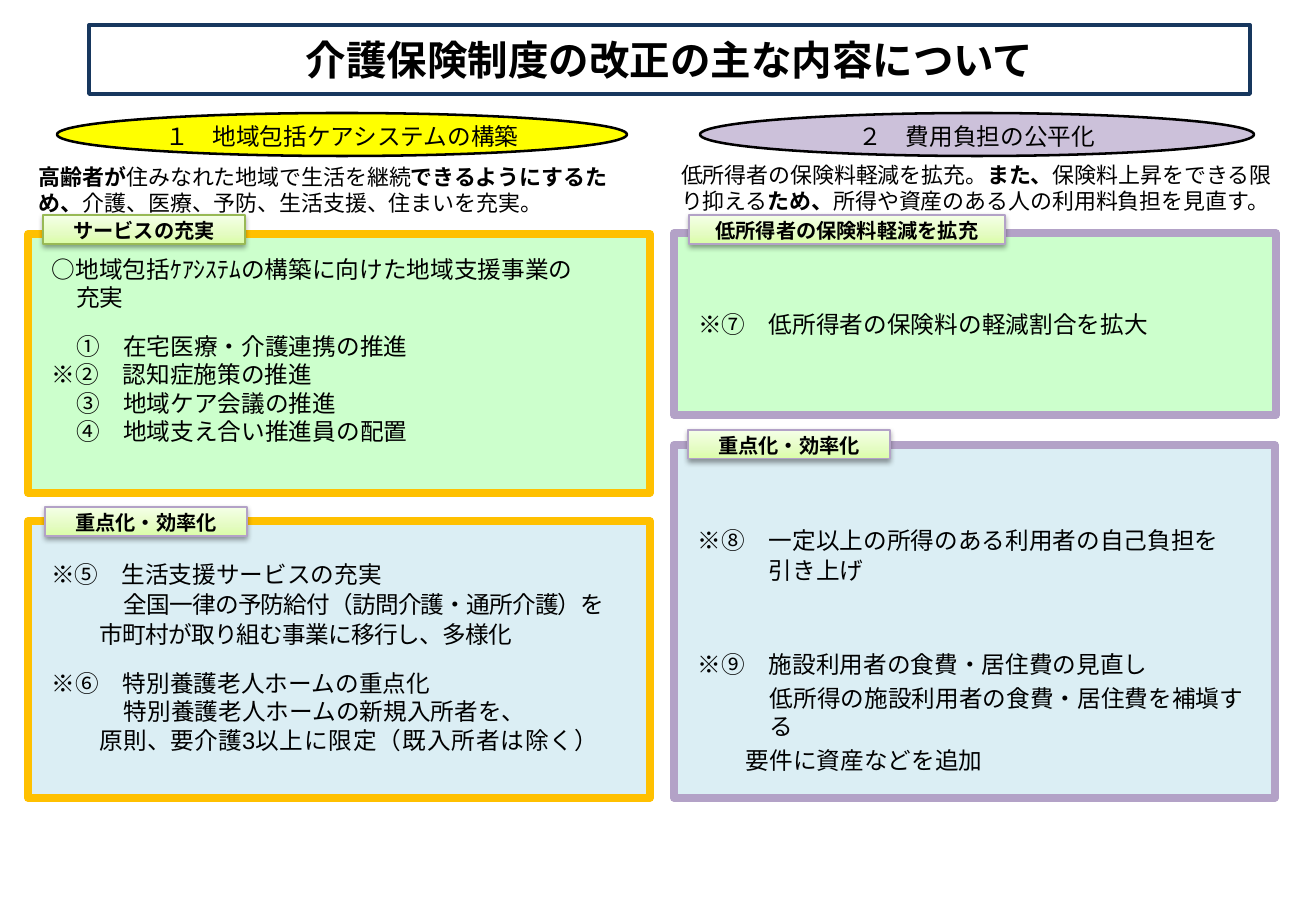
import pptx
import pptx.util
import pptx.dml.color
import pptx.enum.dml
import pptx.enum.lang
import pptx.enum.shapes
import pptx.enum.text
import pptx.oxml.ns
from lxml import etree

SHAPE = pptx.enum.shapes.MSO_SHAPE
ANCHOR = pptx.enum.text.MSO_ANCHOR
ALIGN = pptx.enum.text.PP_ALIGN
NOTO, ARIAL = "Noto Sans CJK JP", "Arial"

C = {"black": "000000", "navy": "17375E", "yellow": "FFFF00", "lilac": "CCC1DA",
     "purple": "B3A2C7", "orange": "FFC000", "green": "CCFFCC", "blue": "DBEEF4",
     "olive": "98B955"}
LABEL_STOPS = [(0, "DAFDA7"), (35000, "E4FCC2"), (100000, "F5FFE7")]

# Content; places are (left, top, width, height) in px
TITLE = ((89, 25, 1161, 69), "介護保険制度の改正の主な内容について")
HEADINGS = [
    ((57, 113, 570, 43), "yellow", "１　地域包括ケアシステムの構築"),
    ((700, 113, 554, 43), "lilac", "２　費用負担の公平化"),
]
# Summaries: runs of (text, bold)
SUMMARIES = [
    ((39, 164, 580, 54), [("高齢者が", True), ("住みなれた地域で生活を継続", False),
                          ("できるようにするため、", True),
                          ("介護、医療、予防、生活支援、住まいを充実。", False)]),
    ((681, 162, 598, 54), [("低所得者の保険料軽減を拡充。", False), ("また、", True),
                           ("保険料上昇をできる限り抑える", False), ("ため、", True),
                           ("所得や資産のある人の利用料負担を見直す。", False)]),
]
# Panels: place, fill, line, top inset, lines of
# (indent px, space before pt, font, [(text, letter spacing pt)])
PANELS = [
    ((28, 234, 622, 259), "green", "orange", 21, [
        (12, 0, NOTO, [("○地域包括ｹｱｼｽﾃﾑの構築に向けた地域支援事業の", 0)]),
        (36, 0, NOTO, [("充実", 0)]),
        (36, 12, NOTO, [("①　在宅医療・介護連携の推進", 0)]),
        (12, 0, NOTO, [("※②　認知症施策の推進", 0)]),
        (36, 0, NOTO, [("③　地域ケア会議の推進", 0)]),
        (36, 0, NOTO, [("④　地域支え合い推進員の配置", 0)])]),
    ((28, 521, 622, 277), "blue", "orange", 39, [
        (12, 0, NOTO, [("※⑤　", -0.5), ("生活支援サービスの充実", 0)]),
        (84, 1, ARIAL, [("全国一律の予防給付（訪問介護・通所介護）を", -0.5)]),
        (60, 1, ARIAL, [("市町村が取り組む事業に移行し、多様化", -0.5)]),
        (12, 12, NOTO, [("※⑥　特別養護老人ホームの重点化", 0)]),
        (84, 0, ARIAL, [("特別養護老人ホームの新規入所者を、", 0)]),
        (60, 0, ARIAL, [("原則、要介護3", 0), ("以上に限定（既入所者は除く）", 0.5)])]),
    ((674, 233, 602, 182), "green", "purple", 77, [
        (12, 0, NOTO, [("※⑦　低所得者の保険料の軽減割合を拡大", 0)])]),
    ((674, 445, 601, 353), "blue", "purple", 81, [
        (12, 0, NOTO, [("※⑧　一定以上の所得のある利用者の自己負担を", 0)]),
        (83, 1, NOTO, [("引き上げ", 0)]),
        (12, 39, NOTO, [("※⑨　施設利用者の食費・居住費の見直し", 0)]),
        (84, 3, ARIAL, [("低所得の施設利用者の食費・居住費を補塡する", 0)]),
        (60, 3, ARIAL, [("要件に資産などを追加", 0)])]),
]
LABELS = [
    ((43, 215, 202, 29), "olive", "サービスの充実"),
    ((45, 507, 202, 29), "purple", "重点化・効率化"),
    ((689, 215, 316, 29), "purple", "低所得者の保険料軽減を拡充"),
    ((688, 430, 202, 29), "purple", "重点化・効率化"),
]


def px(n):
    return round(n * 914400 / 121.5)


def rgb(name):
    return pptx.dml.color.RGBColor.from_string(C[name])


def sub(parent, tag, **attrs):
    return etree.SubElement(parent, pptx.oxml.ns.qn(tag), attrs)


def add_box(kind, place, fill, line, weight):
    sp = s.shapes.add_shape(kind, *map(px, place))
    sp.shadow.inherit = False
    if fill:
        sp.fill.solid()
        sp.fill.fore_color.rgb = rgb(fill)
    else:
        sp.fill.background()
    sp.line.color.rgb = rgb(line)
    sp.line.width = pptx.util.Pt(weight)
    return sp


def frame(sp, anchor=ANCHOR.TOP, top=0, side=0):
    tf = sp.text_frame
    tf.word_wrap = True
    tf.vertical_anchor = anchor
    tf.margin_left = tf.margin_right = px(side)
    tf.margin_top, tf.margin_bottom = px(top), 0
    return tf


def set_par(p, leading, align=ALIGN.LEFT):
    p.alignment = align
    p.line_spacing = pptx.util.Pt(leading)


def add_run(p, text, size, bold=False, font=NOTO, spacing=0):
    r = p.add_run()
    r.text = text
    r.font.size = pptx.util.Pt(size)
    r.font.bold = bold
    r.font.name = font
    r.font.color.rgb = rgb("black")
    r.font.language_id = pptx.enum.lang.MSO_LANGUAGE_ID.JAPANESE
    rPr = r.font._element
    sub(rPr, "a:ea", typeface=font)
    if spacing:
        rPr.set("spc", str(round(spacing * 100)))


def centred(sp, text, size, leading, bold=False, anchor=ANCHOR.MIDDLE, top=0):
    p = frame(sp, anchor, top).paragraphs[0]
    set_par(p, leading, ALIGN.CENTER)
    add_run(p, text, size, bold)


def style_label(sp):
    # Three-stop gradient and soft shadow
    sp.fill.gradient()
    sp.fill.gradient_angle = 90
    spPr = sp._element.spPr
    stops = spPr.find(".//" + pptx.oxml.ns.qn("a:gsLst"))
    for gs in list(stops):
        stops.remove(gs)
    for pos, colour in LABEL_STOPS:
        sub(sub(stops, "a:gs", pos=str(pos)), "a:srgbClr", val=colour)
    shadow = sub(spPr.find(pptx.oxml.ns.qn("a:effectLst")), "a:outerShdw",
                 blurRad="40000", dist="20000", dir="5400000", rotWithShape="0")
    sub(sub(shadow, "a:srgbClr", val=C["black"]), "a:alpha", val="38000")


prs = pptx.Presentation()
prs.slide_width, prs.slide_height = px(1316), px(911)
s = prs.slides.add_slide(prs.slide_layouts[6])

# Title and column headings
place, text = TITLE
centred(add_box(SHAPE.RECTANGLE, place, None, "navy", 2.25), text, 24, 31, True,
        ANCHOR.TOP, 6)
for place, fill, text in HEADINGS:
    centred(add_box(SHAPE.OVAL, place, fill, "black", 1.5), text, 14, 18.7)

# Column summaries
for place, runs in SUMMARIES:
    p = frame(s.shapes.add_textbox(*map(px, place))).paragraphs[0]
    set_par(p, 15.5)
    for text, bold in runs:
        add_run(p, text, 13, bold)

# Panels
for place, fill, line, top, lines in PANELS:
    tf = frame(add_box(SHAPE.RECTANGLE, place, fill, line, 4.5), top=top, side=12)
    for i, (indent, before, font, runs) in enumerate(lines):
        p = tf.add_paragraph() if i else tf.paragraphs[0]
        set_par(p, 16.8)
        p.space_before = pptx.util.Pt(before)
        p._p.get_or_add_pPr().set("marL", str(px(indent)))
        for text, spacing in runs:
            add_run(p, text, 14, font=font, spacing=spacing)

# Panel labels
for place, line, text in LABELS:
    sp = add_box(SHAPE.RECTANGLE, place, None, line, 0.75)
    style_label(sp)
    centred(sp, text, 12, 16, True)

prs.save("out.pptx")
